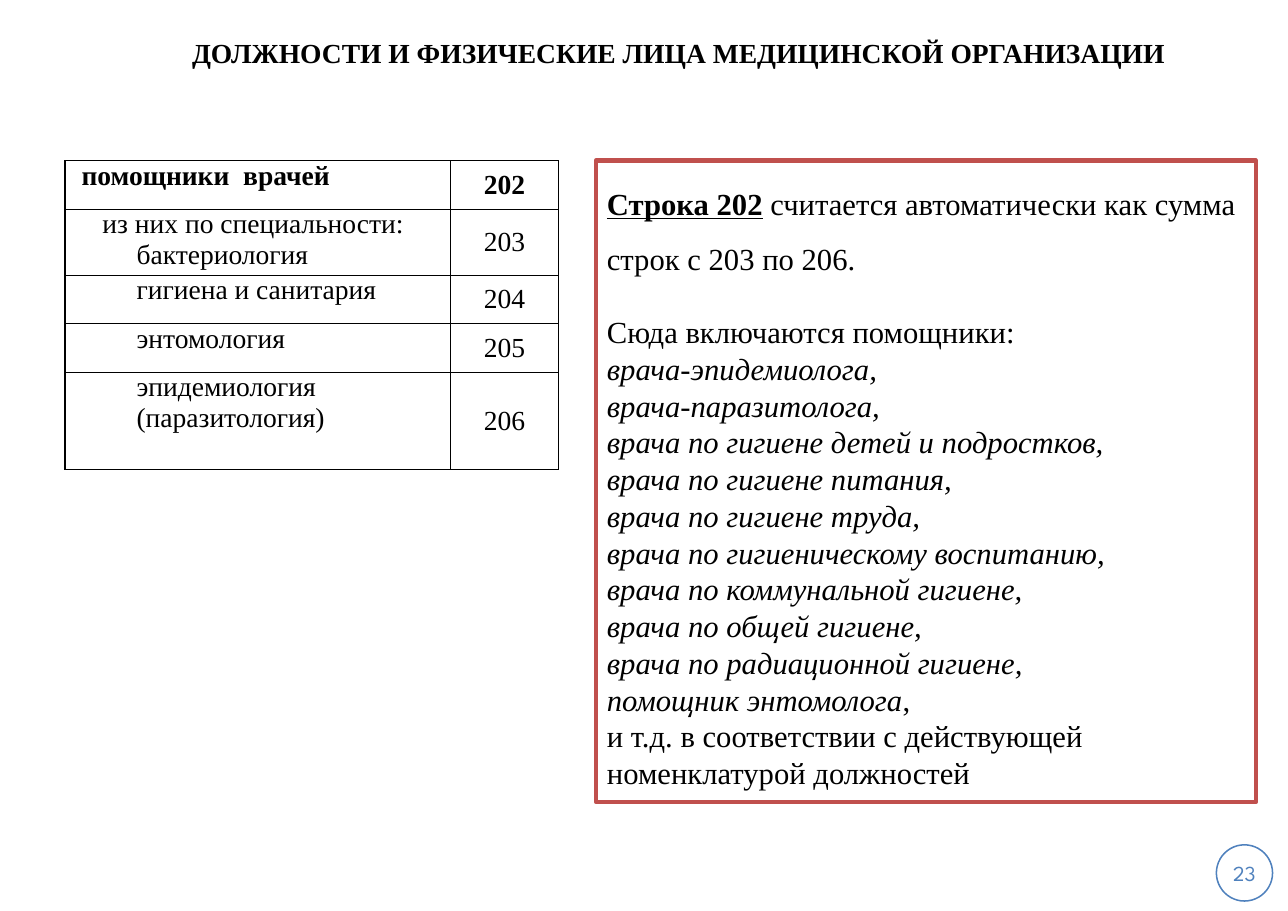
import pptx
import pptx.dml.color
import pptx.enum.shapes
import pptx.enum.text
import pptx.util
from lxml import etree
from pptx.oxml.ns import qn

ALIGN = pptx.enum.text.PP_ALIGN
ANCHOR = pptx.enum.text.MSO_ANCHOR
SHAPE = pptx.enum.shapes.MSO_SHAPE

TITLE = "ДОЛЖНОСТИ И ФИЗИЧЕСКИЕ ЛИЦА МЕДИЦИНСКОЙ ОРГАНИЗАЦИИ"
PAGE = "23"

# Each row: lines as (level, text), row number, height in percent of the slide
POSITIONS = [
    ([(0, "помощники  врачей")], "202", 5.32),
    ([(1, "из них по специальности:"), (2, "бактериология")], "203", 7.01),
    ([(2, "гигиена и санитария")], "204", 5.32),
    ([(2, "энтомология")], "205", 5.32),
    ([(2, "эпидемиология"), (2, "(паразитология)")], "206", 10.64),
]
RULE = [("Строка 202", {"bold": True, "underline": True}),
        (" считается автоматически как сумма строк с 203 по 206.", {})]
INTRO = "Сюда включаются помощники:"
ASSISTANTS = [
    "врача-эпидемиолога,",
    "врача-паразитолога,",
    "врача по гигиене детей и подростков,",
    "врача по гигиене питания,",
    "врача по гигиене труда,",
    "врача по гигиеническому воспитанию,",
    "врача по коммунальной гигиене,",
    "врача по общей гигиене,",
    "врача по радиационной гигиене,",
]
ENTOMOLOGIST = "помощник энтомолога"
CLOSING = "и т.д. в соответствии с действующей номенклатурой должностей"

THEME = {
    "serif": "Times New Roman", "sans": "League Spartan",
    "ink": "000000", "paper": "FFFFFF", "red": "C0504D", "blue": "4F81BD",
    "heading": 18, "note": 20, "page": 14,
}
# Left, top, width, height in percent of the slide
PLACES = {
    "title": (6.24, 0, 93.76, 11.49),
    "table": (5.05, 17.65, 38.32, 33.61),
    "note": (46.28, 17.65, 51.24, 70.37),
    "page": (94.44, 92.74, 4.36, 6.17),
}
COLUMNS = (29.94, 8.38)
LEVEL_INDENTS = (0.08, 0.27, 0.58)

deck = pptx.Presentation()
deck.slide_width = pptx.util.Inches(11.69)
deck.slide_height = pptx.util.Inches(8.27)
slide = deck.slides.add_slide(deck.slide_layouts[6])


def across(percent):
    return round(deck.slide_width * percent / 100)


def down(percent):
    return round(deck.slide_height * percent / 100)


def place(part):
    left, top, width, height = PLACES[part]
    return across(left), down(top), across(width), down(height)


def rgb(name):
    return pptx.dml.color.RGBColor.from_string(THEME[name])


def write(paragraph, runs, size, face="serif", color="ink", align=ALIGN.LEFT):
    paragraph.alignment = align
    for text, style in runs:
        run = paragraph.add_run()
        run.text = text
        run.font.color.rgb = rgb(color)
        look = {"name": THEME[face], "size": pptx.util.Pt(THEME[size]), **style}
        for key, value in look.items():
            setattr(run.font, key, value)


def set_frame(frame, anchor, insets):
    frame.word_wrap = True
    frame.vertical_anchor = anchor
    for side, inset in zip(("left", "top", "right", "bottom"), insets):
        setattr(frame, f"margin_{side}", pptx.util.Inches(inset))
    return frame


def outlined(kind, part, color, weight):
    shape = slide.shapes.add_shape(kind, *place(part))
    shape.shadow.inherit = False
    shape.line.color.rgb = rgb(color)
    shape.line.width = pptx.util.Pt(weight)
    return shape


def paragraphs(frame, count):
    return [frame.paragraphs[0]] + [frame.add_paragraph() for _ in range(count - 1)]


def indent(paragraph, inches):
    paragraph._p.get_or_add_pPr().set("marL", str(pptx.util.Inches(inches)))


def fill_cell(cell, anchor):
    """Give the cell a plain fill, thin margins and a full border."""
    cell.vertical_anchor = anchor
    cell.margin_left = cell.margin_right = pptx.util.Inches(0.07)
    cell.margin_top = cell.margin_bottom = 0
    properties = cell._tc.get_or_add_tcPr()
    for edge in ("a:lnL", "a:lnR", "a:lnT", "a:lnB"):
        line = etree.SubElement(properties, qn(edge), w=str(pptx.util.Pt(1)))
        solid = etree.SubElement(line, qn("a:solidFill"))
        etree.SubElement(solid, qn("a:srgbClr"), val=THEME["ink"])
    cell.fill.background()


def add_positions():
    table = slide.shapes.add_table(len(POSITIONS), len(COLUMNS), *place("table")).table
    table.first_row = table.horz_banding = False
    for column, width in zip(table.columns, COLUMNS):
        column.width = across(width)
    for index, (lines, number, height) in enumerate(POSITIONS):
        table.rows[index].height = down(height)
        style = {"bold": index == 0}
        label, code = table.rows[index].cells
        fill_cell(label, ANCHOR.TOP)
        fill_cell(code, ANCHOR.MIDDLE)
        for paragraph, (level, text) in zip(paragraphs(label.text_frame, len(lines)), lines):
            indent(paragraph, LEVEL_INDENTS[level])
            write(paragraph, [(text, style)], "heading")
        write(code.text_frame.paragraphs[0], [(number, style)], "heading", align=ALIGN.CENTER)


def add_note():
    box = outlined(SHAPE.RECTANGLE, "note", "red", 3)
    box.fill.solid()
    box.fill.fore_color.rgb = rgb("paper")
    frame = set_frame(box.text_frame, ANCHOR.TOP, (0.1, 0.05, 0.1, 0.05))
    italic = {"italic": True}
    content = [RULE, [(INTRO, {})]]
    content += [[(name, italic)] for name in ASSISTANTS]
    content += [[(ENTOMOLOGIST, italic), (",", {})], [(CLOSING, {})]]
    lines = paragraphs(frame, len(content))
    for paragraph, runs in zip(lines, content):
        write(paragraph, runs, "note")
    lines[0].line_spacing = 1.5
    lines[1].space_before = pptx.util.Pt(24)


def add_page():
    circle = outlined(SHAPE.OVAL, "page", "blue", 1)
    circle.fill.background()
    frame = set_frame(circle.text_frame, ANCHOR.MIDDLE, (0, 0, 0, 0))
    write(frame.paragraphs[0], [(PAGE, {})], "page", "sans", "blue", ALIGN.CENTER)


def add_title():
    box = slide.shapes.add_textbox(*place("title"))
    frame = set_frame(box.text_frame, ANCHOR.MIDDLE, (0, 0.05, 0.1, 0.05))
    write(frame.paragraphs[0], [(TITLE, {"bold": True})], "heading", align=ALIGN.CENTER)


if __name__ == "__main__":
    add_page()
    add_title()
    add_positions()
    add_note()
    deck.save("out.pptx")
